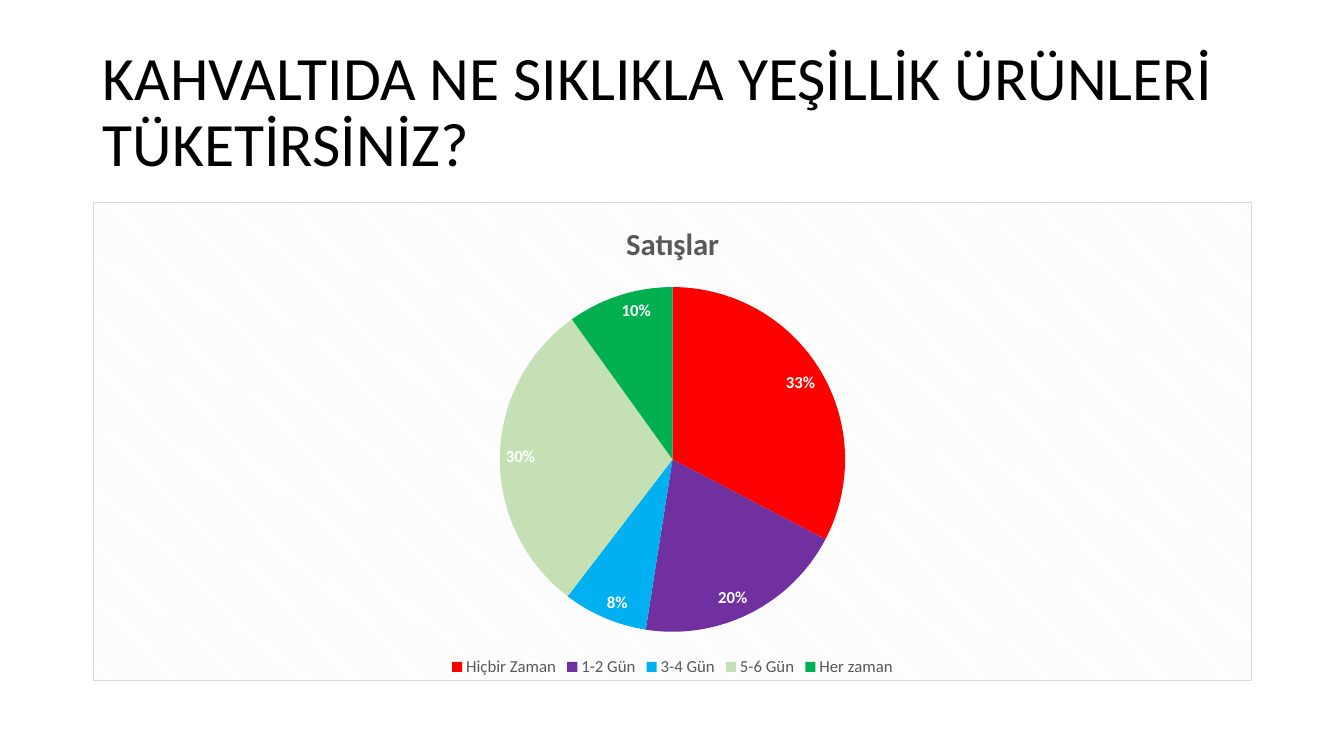
from lxml.etree import fromstring
from pptx import Presentation
from pptx.chart.data import CategoryChartData
from pptx.dml.color import RGBColor
from pptx.enum.chart import XL_CHART_TYPE, XL_LABEL_POSITION, XL_LEGEND_POSITION
from pptx.enum.text import MSO_ANCHOR, MSO_AUTO_SIZE, PP_ALIGN
from pptx.util import Inches, Pt

FONT = "Calibri"
BLACK = RGBColor(0x00, 0x00, 0x00)
WHITE = RGBColor(0xFF, 0xFF, 0xFF)
GREY = RGBColor(0x59, 0x59, 0x59)
PATTERN = RGBColor(0xF2, 0xF2, 0xF2)
BORDER = RGBColor(0xD9, 0xD9, 0xD9)
RED = RGBColor(0xFF, 0x00, 0x00)
PURPLE = RGBColor(0x70, 0x30, 0xA0)
BLUE = RGBColor(0x00, 0xB0, 0xF0)
LIGHT_GREEN = RGBColor(0xC5, 0xE0, 0xB4)
GREEN = RGBColor(0x00, 0xB0, 0x50)

ANSWERS = [
    ("Hiçbir Zaman", 33, RED),
    ("1-2 Gün", 20, PURPLE),
    ("3-4 Gün", 8, BLUE),
    ("5-6 Gün", 30, LIGHT_GREEN),
    ("Her zaman", 10, GREEN),
]


def style_font(font, size, color, bold=False):
    """Set the face, size, colour and weight of a font."""
    font.name = FONT
    font.size = Pt(size)
    font.bold = bold
    font.color.rgb = color


def add_title(page, box, text):
    """Place the slide title in the given box."""
    title = page.shapes.title
    title.left, title.top, title.width, title.height = box
    frame = title.text_frame
    frame.word_wrap = True
    frame.auto_size = MSO_AUTO_SIZE.NONE
    frame.vertical_anchor = MSO_ANCHOR.MIDDLE
    para = frame.paragraphs[0]
    para.alignment = PP_ALIGN.LEFT
    para.line_spacing = 0.9
    span = para.add_run()
    span.text = text
    style_font(span.font, 44, BLACK)


def fill_chart_area(chart):
    """Give the chart area its diagonal pattern and thin border."""
    area = fromstring(
        '<c:spPr xmlns:c="http://schemas.openxmlformats.org/drawingml/2006/chart"'
        ' xmlns:a="http://schemas.openxmlformats.org/drawingml/2006/main">'
        '<a:pattFill prst="dkDnDiag">'
        f'<a:fgClr><a:srgbClr val="{PATTERN}"/></a:fgClr>'
        f'<a:bgClr><a:srgbClr val="{WHITE}"/></a:bgClr></a:pattFill>'
        f'<a:ln w="{Pt(0.75)}"><a:solidFill><a:srgbClr val="{BORDER}"/>'
        '</a:solidFill></a:ln></c:spPr>'
    )
    chart.element.chart.addnext(area)


def add_answer_pie(page, box, name):
    """Draw the answers as a pie chart in the given box."""
    data = CategoryChartData()
    data.categories = [label for label, _, _ in ANSWERS]
    data.add_series(name, [value for _, value, _ in ANSWERS])
    chart = page.shapes.add_chart(XL_CHART_TYPE.PIE, *box, data).chart
    style_font(chart.font, 10, BLACK)
    fill_chart_area(chart)

    chart.has_title = True
    span = chart.chart_title.text_frame.paragraphs[0].add_run()
    span.text = name
    style_font(span.font, 22, GREY, bold=True)
    chart.chart_title.include_in_layout = False

    chart.has_legend = True
    chart.legend.position = XL_LEGEND_POSITION.BOTTOM
    chart.legend.include_in_layout = False
    style_font(chart.legend.font, 12, GREY)

    plot = chart.plots[0]
    plot.vary_by_categories = True
    series = plot.series[0]
    for index, (_, _, color) in enumerate(ANSWERS):
        fill = series.points[index].format.fill
        fill.solid()
        fill.fore_color.rgb = color

    labels = series.data_labels
    labels.show_value = False
    labels.show_percentage = True
    labels.number_format = "0%"
    labels.number_format_is_linked = False
    labels.position = XL_LABEL_POSITION.INSIDE_END
    style_font(labels.font, 12, WHITE, bold=True)


def main():
    """Build the one-slide deck and save it."""
    deck = Presentation()
    deck.slide_width, deck.slide_height = Inches(13.33), Inches(7.5)
    page = deck.slides.add_slide(deck.slide_layouts[5])
    left, width = Inches(0.92), Inches(11.5)
    add_title(page, (left, Inches(0.4), width, Inches(1.45)),
              "KAHVALTIDA NE SIKLIKLA YEŞİLLİK ÜRÜNLERİ TÜKETİRSİNİZ?")
    add_answer_pie(page, (left, Inches(2), width, Inches(4.76)), "Satışlar")
    deck.save("out.pptx")


if __name__ == "__main__":
    main()
